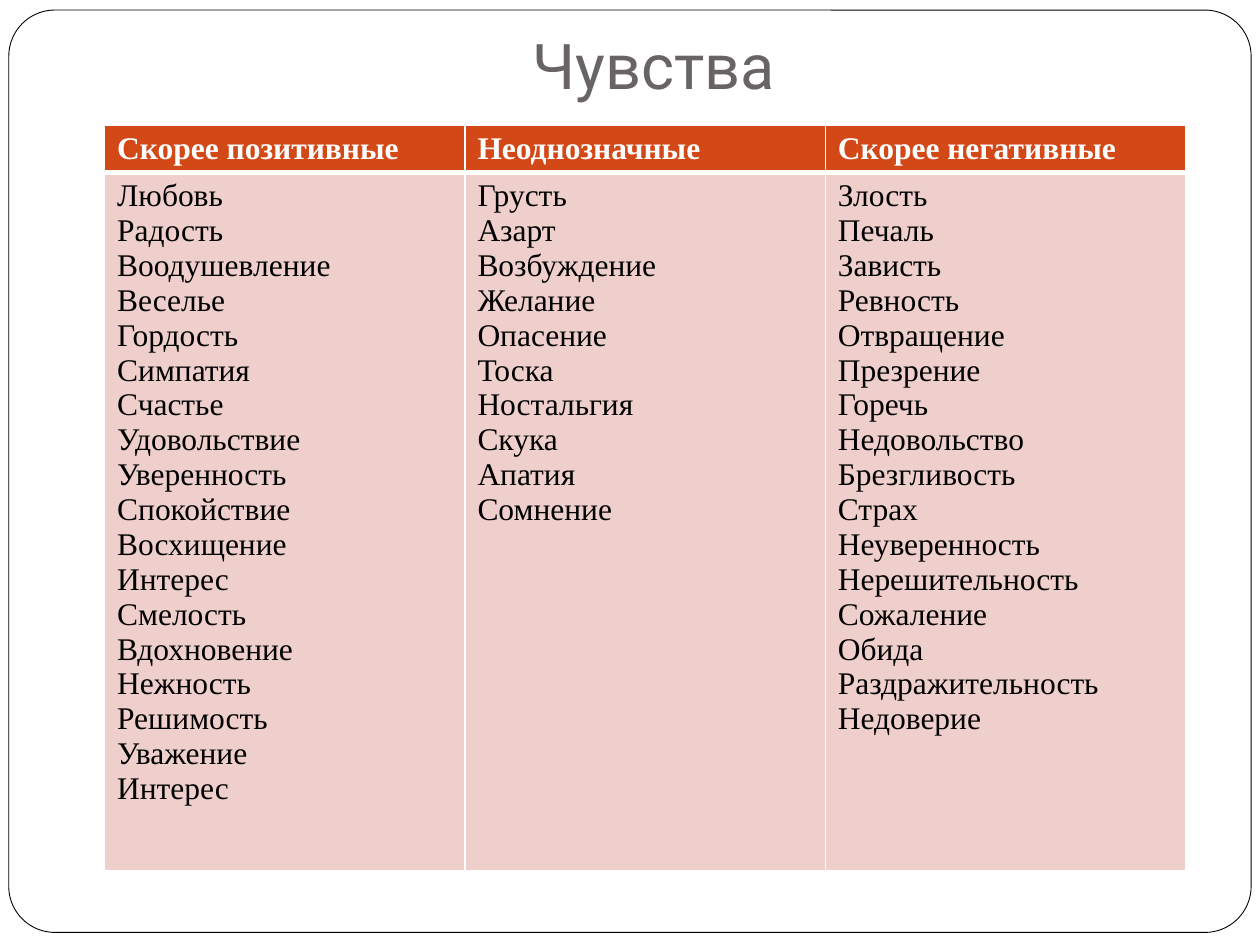
from lxml import etree
from pptx import Presentation
from pptx import util as u
from pptx.dml.color import RGBColor
from pptx.enum import shapes, text
from pptx.oxml.ns import qn

WHITE = RGBColor(0xFF, 0xFF, 0xFF)
BLACK = RGBColor(0x00, 0x00, 0x00)
GREY = RGBColor(0x69, 0x64, 0x64)
ORANGE = RGBColor(0xD3, 0x48, 0x17)
PINK = RGBColor(0xEF, 0xCF, 0xCC)

FEELINGS = {
    "Скорее позитивные": [
        "Любовь", "Радость", "Воодушевление", "Веселье", "Гордость", "Симпатия",
        "Счастье", "Удовольствие", "Уверенность", "Спокойствие", "Восхищение",
        "Интерес", "Смелость", "Вдохновение", "Нежность", "Решимость",
        "Уважение", "Интерес"],
    "Неоднозначные": [
        "Грусть", "Азарт", "Возбуждение", "Желание", "Опасение", "Тоска",
        "Ностальгия", "Скука", "Апатия", "Сомнение"],
    "Скорее негативные": [
        "Злость", "Печаль", "Зависть", "Ревность", "Отвращение", "Презрение",
        "Горечь", "Недовольство", "Брезгливость", "Страх", "Неуверенность",
        "Нерешительность", "Сожаление", "Обида", "Раздражительность",
        "Недоверие"],
}
COLUMN_WIDTH = u.Inches(2.86)
ROW_HEIGHTS = [u.Inches(0.37), u.Inches(5.54)]


def set_format(target, values):
    for name, value in values.items():
        setattr(target, name, value)


def set_borders(cell, widths):
    """Draw white cell borders, placed ahead of the fill as the schema asks."""
    properties = cell._tc.get_or_add_tcPr()
    for index, (side, points) in enumerate(widths.items()):
        line = etree.Element(qn("a:" + side), w=str(u.Pt(points)))
        fill = etree.SubElement(line, qn("a:solidFill"))
        etree.SubElement(fill, qn("a:srgbClr"), val=str(WHITE))
        properties.insert(index, line)


deck = Presentation()
set_format(deck, {"slide_width": u.Inches(10), "slide_height": u.Inches(7.5)})
page = deck.slides.add_slide(deck.slide_layouts[5])

# Rounded frame, behind everything else
frame = page.shapes.add_shape(
    shapes.MSO_SHAPE.ROUNDED_RECTANGLE,
    u.Inches(0.07), u.Inches(0.08), u.Inches(9.86), u.Inches(7.32))
frame.adjustments[0] = 0.05
frame.shadow.inherit = False
frame.fill.solid()
frame.fill.fore_color.rgb = WHITE
frame.line.color.rgb = BLACK
frame.line.width = u.Pt(0.5)
page.shapes._spTree.insert(2, frame._element)

# Title
title = page.shapes.title
set_format(title, {"left": u.Inches(1), "top": u.Inches(0.3),
                   "width": u.Inches(8.5), "height": u.Inches(0.61)})
set_format(title.text_frame, {
    "text": "Чувства ", "word_wrap": True,
    "auto_size": text.MSO_AUTO_SIZE.NONE,
    "vertical_anchor": text.MSO_ANCHOR.BOTTOM,
    "margin_left": u.Inches(0.1), "margin_right": u.Inches(0.1),
    "margin_top": u.Inches(0.05), "margin_bottom": u.Inches(0.1)})
para = title.text_frame.paragraphs[0]
para.alignment = text.PP_ALIGN.CENTER
span = para.runs[0]
set_format(span.font, {"name": "Roboto", "size": u.Pt(36)})
span.font.color.rgb = GREY

# Table: one column per group of feelings
table = page.shapes.add_table(
    len(ROW_HEIGHTS), len(FEELINGS), u.Inches(0.83), u.Inches(0.99),
    COLUMN_WIDTH * len(FEELINGS), sum(ROW_HEIGHTS)).table
for row, height in zip(table.rows, ROW_HEIGHTS):
    row.height = height

row_styles = [
    {"fill": ORANGE, "color": WHITE, "bold": True, "bottom": 3},
    {"fill": PINK, "color": BLACK, "bold": False, "bottom": 1},
]
for column, (heading, words) in enumerate(FEELINGS.items()):
    table.columns[column].width = COLUMN_WIDTH
    for row, (lines, style) in enumerate(zip([[heading], words], row_styles)):
        cell = table.cell(row, column)
        cell.fill.solid()
        cell.fill.fore_color.rgb = style["fill"]
        top = row_styles[row - 1]["bottom"] if row else 1
        set_borders(cell, {"lnL": 1, "lnR": 1, "lnT": top,
                           "lnB": style["bottom"]})
        cell.text_frame.text = "\n".join(lines)
        for para in cell.text_frame.paragraphs:
            span = para.runs[0]
            set_format(span.font, {"name": "Times New Roman",
                                   "size": u.Pt(18), "bold": style["bold"]})
            span.font.color.rgb = style["color"]

deck.save("out.pptx")
